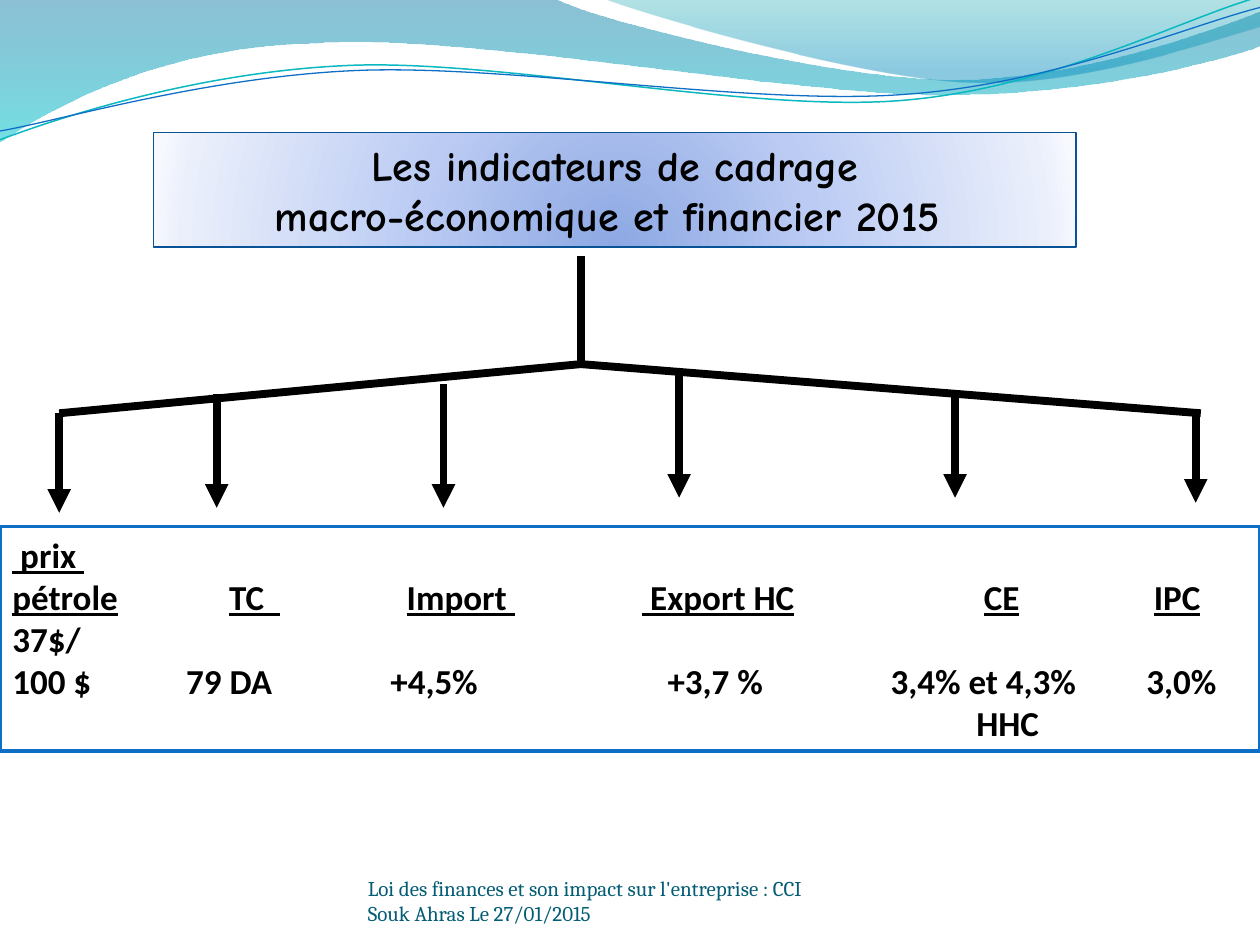
from math import cos, radians, sin

from lxml.etree import SubElement
from pptx import Presentation
from pptx.dml.color import RGBColor
from pptx.enum.shapes import MSO_CONNECTOR, MSO_SHAPE
from pptx.enum.text import MSO_ANCHOR, MSO_AUTO_SIZE, PP_ALIGN
from pptx.oxml.ns import qn
from pptx.util import Inches, Pt

COLORS = {
    "black": "000000", "white": "FFFFFF", "frame": "0F6FC6",
    "title_edge": "095295", "footer": "045D75", "teal_line": "0AB8BF",
}
LEFT_WAVE_STOPS = [(0, "0074A1", 45), (100, "00C6CF", 55)]
RIGHT_WAVE_STOPS = [(0, "00A1A9", 30), (80, "008BBF", 45)]
TITLE_STOPS = [(0, "8DA8E3", 100), (43, "BBCBF3", 100),
               (93, "EAEFFB", 100), (100, "F7F9FF", 100)]

LEFT_WAVE = [(0, 0), (4.4, -0.01),
             (4.76, 0.17, 6.64, 0.63, 7.58, 0.63),
             (8.53, 0.63, 9.58, 0.26, 10, 0.09), (10.01, 0.36),
             (9.83, 0.44, 8.7, 0.76, 7.46, 0.75),
             (6.22, 0.75, 3.82, 0.28, 2.57, 0.34),
             (1.29, 0.36, 0.46, 0.83, -0.01, 1.13), (0, 0)]
RIGHT_WAVE = [(4.79, -0.01),
              (5.09, 0.11, 6.82, 0.62, 7.69, 0.65),
              (8.56, 0.69, 9.61, 0.32, 10, 0.21), (10, 0), (4.79, -0.01)]
TEAL_CURVE = [(0, 1.11),
              (0.48, 0.93, 1.58, 0.57, 2.77, 0.52),
              (3.95, 0.47, 5.93, 0.89, 7.13, 0.8),
              (8.33, 0.71, 9.38, 0.15, 9.98, -0.02)]
BLUE_CURVE = [(0, 1.04),
              (0.47, 0.96, 1.64, 0.61, 2.83, 0.56),
              (4.03, 0.51, 5.97, 0.84, 7.17, 0.75),
              (8.36, 0.67, 9.41, 0.21, 10, 0.06)]
STROKE_TILT = 2.7

TITLE = ["Les indicateurs de cadrage", "macro-économique et financier 2015 "]
INDICATORS = [
    ([" prix "], [], True),
    (["pétrole", "TC  ", "Import ", " Export HC", "CE", "IPC"],
     [1.72, 3.13, 5, 7.71, 9.06], True),
    (["37$/"], [], False),
    (["100 $", "79 DA", "+4,5%", "+3,7 %", "3,4% et 4,3%", "3,0%"],
     [1.38, 3, 5.2, 6.97, 9], False),
    (["", "HHC"], [7.65], False),
]
FOOTER = "Loi des finances et son impact sur l'entreprise : CCI Souk Ahras Le 27/01/2015"

HUB = (4.61, 2.89)
BRANCHES = [((4.61, 2.03), HUB), (HUB, (0.47, 3.28)), (HUB, (9.53, 3.28))]
ARROWS = [(1.72, 3.13, 4.03), (3.52, 3.05, 4.03), (5.39, 2.96, 3.95),
          (7.58, 3.12, 3.95), (9.49, 3.28, 3.99), (0.47, 3.28, 4.07)]


def rgb(name):
    return RGBColor.from_string(COLORS[name])


def set_line(line, color, width):
    line.color.rgb = rgb(color)
    line.width = Pt(width)


def set_gradient(shape, stops, center=None):
    shape.fill.background()
    properties = shape._element.spPr
    gradient = properties.makeelement(qn("a:gradFill"), {"rotWithShape": "1"})
    properties.replace(properties.find(qn("a:noFill")), gradient)
    stop_list = SubElement(gradient, qn("a:gsLst"))
    for position, color, opacity in stops:
        stop = SubElement(stop_list, qn("a:gs"), pos=str(position * 1000))
        shade = SubElement(stop, qn("a:srgbClr"), val=color)
        if opacity < 100:
            SubElement(shade, qn("a:alpha"), val=str(opacity * 1000))
    if center:
        radial = SubElement(gradient, qn("a:path"), path="circle")
        sides = {side: str(share * 1000) for side, share in zip("ltrb", center)}
        SubElement(radial, qn("a:fillToRect"), sides)
    else:
        SubElement(gradient, qn("a:lin"), ang="5400000", scaled="1")


def turn(point, angle, center=(5, 0.57)):
    x, y = point[0] - center[0], point[1] - center[1]
    c, s = cos(radians(angle)), sin(radians(angle))
    return center[0] + x * c - y * s, center[1] + x * s + y * c


def add_curve(slide, segments, closed, tilt=0):
    points = [turn(pair, tilt) for segment in segments
              for pair in zip(segment[::2], segment[1::2])]
    points = [(Inches(x), Inches(y)) for x, y in points]
    builder = slide.shapes.build_freeform(*points[0])
    builder.add_line_segments(points[1:], close=closed)
    curve = builder.convert_to_shape()
    curve.rotation = -tilt % 360
    curve.shadow.inherit = False
    lines = iter(list(curve._element.iter(qn("a:lnTo"))))
    for segment in segments[1:]:
        first = next(lines)
        if len(segment) == 6:
            bezier = first.makeelement(qn("a:cubicBezTo"), {})
            first.addprevious(bezier)
            for line in (first, next(lines), next(lines)):
                bezier.append(line[0])
                line.getparent().remove(line)
    return curve


def add_wave(slide, segments, stops):
    wave = add_curve(slide, segments, True)
    set_gradient(wave, stops)
    wave.line.fill.background()


def add_stroke(slide, segments, color, width):
    stroke = add_curve(slide, segments, False, STROKE_TILT)
    stroke.fill.background()
    set_line(stroke.line, color, width)


def add_box(slide, left, top, width, height, edge, edge_width):
    box = slide.shapes.add_shape(MSO_SHAPE.RECTANGLE, Inches(left), Inches(top),
                                 Inches(width), Inches(height))
    box.shadow.inherit = False
    set_line(box.line, edge, edge_width)
    box.text_frame.auto_size = MSO_AUTO_SIZE.SHAPE_TO_FIT_TEXT
    return box


def add_text(frame, cells, first=False, tabs=(), font="Calibri", size=20,
             color="black", bold=True, underline=False, align=PP_ALIGN.LEFT):
    paragraph = frame.paragraphs[0] if first else frame.add_paragraph()
    paragraph.alignment = align
    if tabs:
        tab_list = SubElement(paragraph._p.get_or_add_pPr(), qn("a:tabLst"))
        for position in tabs:
            SubElement(tab_list, qn("a:tab"), pos=str(Inches(position)), algn="l")
    for index, cell in enumerate(cells):
        pieces = [("\t", False)] if index else []
        for text, underlined in pieces + [(cell, underline)]:
            if not text:
                continue
            run = paragraph.add_run()
            run.text = text
            run.font.name = font
            run.font.size = Pt(size)
            run.font.bold = bold
            run.font.underline = underlined
            run.font.color.rgb = rgb(color)


def prepare_frame(shape, anchor):
    frame = shape.text_frame
    frame.word_wrap = True
    frame.vertical_anchor = anchor
    return frame


def add_link(slide, start, end, arrow=False):
    link = slide.shapes.add_connector(MSO_CONNECTOR.STRAIGHT,
                                      *(Inches(value) for value in (*start, *end)))
    set_line(link.line, "black", 4.5)
    if arrow:
        SubElement(link.line._get_or_add_ln(), qn("a:tailEnd"), type="triangle")
    SubElement(link._element.spPr, qn("a:effectLst"))


def add_title(slide):
    box = add_box(slide, 1.22, 1.05, 7.32, 0.91, "title_edge", 0.75)
    set_gradient(box, TITLE_STOPS, center=(50, 130, 50, -30))
    frame = prepare_frame(box, MSO_ANCHOR.MIDDLE)
    for index, text in enumerate(TITLE):
        add_text(frame, [text], first=index == 0, font="Comic Neue", size=24,
                 align=PP_ALIGN.CENTER)


def add_indicators(slide):
    box = add_box(slide, 0, 4.18, 10, 1.78, "frame", 2)
    box.fill.solid()
    box.fill.fore_color.rgb = rgb("white")
    frame = prepare_frame(box, MSO_ANCHOR.MIDDLE)
    for index, (cells, tabs, underline) in enumerate(INDICATORS):
        add_text(frame, cells, first=index == 0, tabs=tabs, underline=underline)


def add_footer(slide):
    footer = slide.shapes.add_textbox(Inches(2.92), Inches(6.95),
                                      Inches(3.67), Inches(0.4))
    frame = prepare_frame(footer, MSO_ANCHOR.BOTTOM)
    frame.margin_left = frame.margin_right = frame.margin_top = frame.margin_bottom = 0
    add_text(frame, [FOOTER], first=True, font="Cambria", size=12,
             color="footer", bold=False)


def main():
    deck = Presentation()
    deck.slide_width, deck.slide_height = Inches(10), Inches(7.5)
    slide = deck.slides.add_slide(deck.slide_layouts[6])
    add_wave(slide, LEFT_WAVE, LEFT_WAVE_STOPS)
    add_wave(slide, RIGHT_WAVE, RIGHT_WAVE_STOPS)
    add_stroke(slide, TEAL_CURVE, "teal_line", 0.85)
    add_stroke(slide, BLUE_CURVE, "frame", 0.75)
    add_title(slide)
    add_indicators(slide)
    for start, end in BRANCHES:
        add_link(slide, start, end)
    for x, top, bottom in ARROWS:
        add_link(slide, (x, top), (x, bottom), arrow=True)
    add_footer(slide)
    deck.save("out.pptx")


if __name__ == "__main__":
    main()
